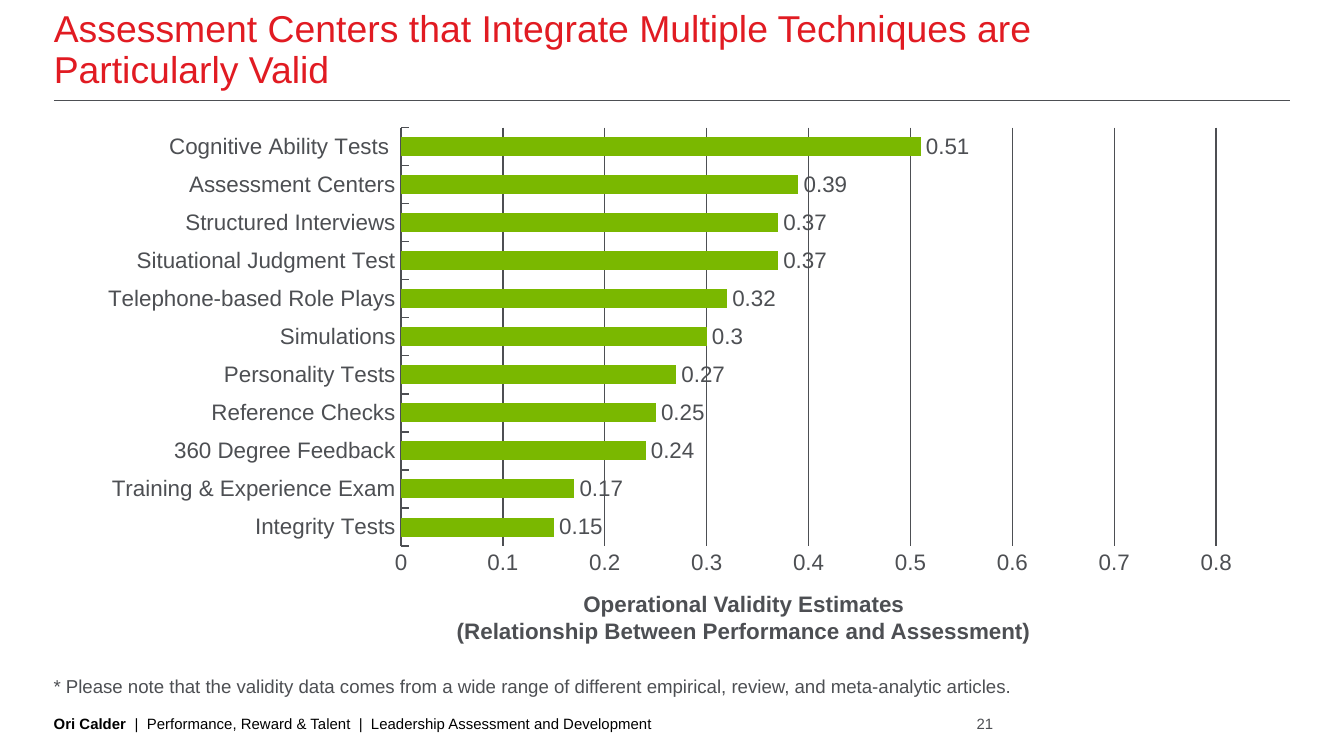
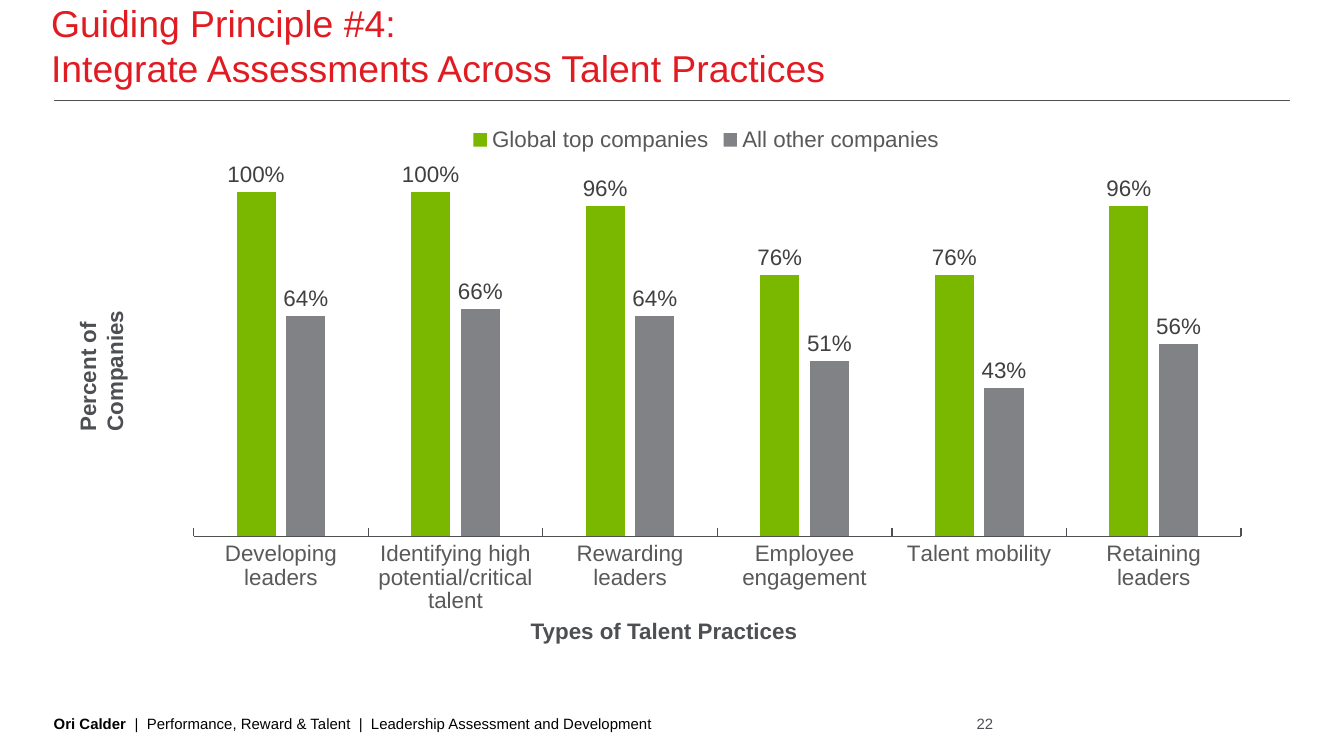
from dataclasses import dataclass

from lxml import etree
from pptx import Presentation
from pptx.chart.chart import Chart
from pptx.chart.data import CategoryChartData
from pptx.dml.color import RGBColor
from pptx.enum.chart import XL_CHART_TYPE as ChartType
from pptx.enum.chart import XL_LABEL_POSITION as LabelPosition
from pptx.enum.chart import XL_LEGEND_POSITION as LegendPosition
from pptx.enum.chart import XL_TICK_MARK as TickMark
from pptx.enum.shapes import MSO_CONNECTOR as Connector
from pptx.enum.text import MSO_ANCHOR as Anchor
from pptx.enum.text import MSO_AUTO_SIZE as AutoSize
from pptx.enum.text import PP_ALIGN as Align
from pptx.oxml import parse_xml
from pptx.oxml.ns import nsdecls, qn
from pptx.slide import Slide
from pptx.text.text import Font
from pptx.util import Emu, Pt

# Shared style: 200 px to the inch
PX = 4572
FONT = "Arial"
RED = RGBColor(0xE1, 0x1B, 0x22)
GREEN = RGBColor(0x7A, 0xB8, 0x00)
GRAY = RGBColor(0x80, 0x82, 0x85)
SLATE = RGBColor(0x4D, 0x4F, 0x53)
LEGEND_GRAY = RGBColor(0x59, 0x59, 0x59)
LABEL_GRAY = RGBColor(0x40, 0x40, 0x40)
BLACK = RGBColor(0, 0, 0)


@dataclass(frozen=True)
class Box:
    left: int
    top: int
    width: int
    height: int

    def emu(self) -> tuple[Emu, ...]:
        return tuple(Emu(px * PX) for px in (self.left, self.top, self.width, self.height))


@dataclass(frozen=True)
class Label:
    lines: tuple[str, ...]
    box: Box
    size: int = 12
    bold: bool = False
    align: Align = Align.LEFT
    color: RGBColor = SLATE
    vertical: bool = False
    flush: bool = False  # no insets, text sits on the bottom edge


@dataclass(frozen=True)
class Series:
    name: str
    values: tuple[float, ...]
    color: RGBColor


@dataclass(frozen=True)
class ChartStyle:
    kind: ChartType
    box: Box
    gap: int
    overlap: int
    axis_color: RGBColor
    label_color: RGBColor
    maximum: float
    number_format: str


FOOTER_NAME = "Ori Calder  "
FOOTER_TEXT = "|  Performance, Reward & Talent  |  Leadership Assessment and Development"

VALIDITY = {
    "Integrity Tests": 0.15,
    "Training & Experience Exam": 0.17,
    "360 Degree Feedback": 0.24,
    "Reference Checks": 0.25,
    "Personality Tests": 0.27,
    "Simulations": 0.3,
    "Telephone-based Role Plays": 0.32,
    "Situational Judgment Test": 0.37,
    "Structured Interviews": 0.37,
    "Assessment Centers": 0.39,
    "Cognitive Ability Tests ": 0.51,
}
PRACTICES = (
    "Developing leaders",
    "Identifying high potential/critical talent",
    "Rewarding leaders",
    "Employee engagement",
    "Talent mobility",
    "Retaining leaders",
)
COMPANIES = (
    Series("Global top companies", (1, 1, 0.96, 0.76, 0.76, 0.96), GREEN),
    Series("All other companies", (0.64, 0.66, 0.64, 0.51, 0.43, 0.56), GRAY),
)

VALIDITY_LABELS = (
    Label(
        ("Operational Validity Estimates", "(Relationship Between Performance and Assessment)"),
        Box(542, 868, 1130, 100), bold=True, align=Align.CENTER,
    ),
    Label(
        ("* Please note that the validity data comes from a wide range of different "
         "empirical, review, and meta-analytic articles.",),
        Box(60, 994, 1498, 54), size=10,
    ),
)
PRACTICE_LABELS = (
    Label(("Percent of Companies",), Box(100, 336, 122, 326), bold=True, vertical=True),
    Label(("Types of Talent Practices",), Box(770, 908, 456, 60), bold=True),
)

VALIDITY_STYLE = ChartStyle(
    ChartType.BAR_CLUSTERED, Box(126, 176, 1742, 694), 100, 0, SLATE, SLATE, 0.8, "General")
PRACTICE_STYLE = ChartStyle(
    ChartType.COLUMN_CLUSTERED, Box(222, 168, 1658, 788), 219, -27,
    LEGEND_GRAY, LABEL_GRAY, 1, "0%")


def set_font(font: Font, size: int, color: RGBColor, bold: bool = False) -> None:
    font.name = FONT
    font.size = Pt(size)
    font.bold = bold
    font.color.rgb = color


def clear_insets(frame) -> None:
    frame.margin_left = frame.margin_top = frame.margin_right = frame.margin_bottom = 0
    frame.vertical_anchor = Anchor.BOTTOM


def add_label(slide: Slide, label: Label):
    frame = slide.shapes.add_textbox(*label.box.emu()).text_frame
    frame.word_wrap = True
    if label.flush:
        clear_insets(frame)
    if label.vertical:
        frame._txBody.bodyPr.set("vert", "vert270")
    for index, line in enumerate(label.lines):
        paragraph = frame.add_paragraph() if index else frame.paragraphs[0]
        paragraph.text = line
        paragraph.alignment = label.align
        set_font(paragraph.font, label.size, label.color, label.bold)
    return frame


def add_footer(slide: Slide, number: int) -> None:
    add_label(slide, Label((str(number),), Box(1400, 1064, 78, 26), 8,
                           align=Align.RIGHT, flush=True))
    frame = add_label(slide, Label((FOOTER_NAME,), Box(80, 1064, 1320, 26), 8,
                                   color=BLACK, flush=True))
    paragraph = frame.paragraphs[0]
    paragraph.runs[0].font.bold = True
    paragraph.add_run().text = FOOTER_TEXT


def add_rule(slide: Slide) -> None:
    ends = (Emu(px * PX) for px in (80, 150, 1920, 150))
    rule = slide.shapes.add_connector(Connector.STRAIGHT, *ends)
    rule.line.color.rgb = SLATE
    rule.line.width = Pt(0.75)
    etree.SubElement(rule._element.spPr, qn("a:effectLst"))


def add_slide(presentation: Presentation, title: str, box: Box,
              spacing: float, number: int) -> Slide:
    slide = presentation.slides.add_slide(presentation.slide_layouts[5])
    shape = slide.shapes.title
    shape.left, shape.top, shape.width, shape.height = box.emu()
    frame = shape.text_frame
    frame.auto_size = AutoSize.NONE
    frame.word_wrap = True
    clear_insets(frame)
    paragraph = frame.paragraphs[0]
    paragraph.text = title
    paragraph.alignment = Align.LEFT
    paragraph.line_spacing = spacing
    set_font(paragraph.font, 20, RED)
    add_rule(slide)
    add_footer(slide, number)
    return slide


def add_chart(slide: Slide, style: ChartStyle, categories: tuple[str, ...],
              series_list: tuple[Series, ...]) -> Chart:
    data = CategoryChartData(number_format=style.number_format)
    data.categories = categories
    for item in series_list:
        data.add_series(item.name, item.values)
    chart = slide.shapes.add_chart(style.kind, *style.box.emu(), data).chart
    chart.has_title = False
    chart.has_legend = False
    set_font(chart.font, 10, BLACK)

    plot = chart.plots[0]
    plot.vary_by_categories = False
    plot.gap_width = style.gap
    plot.overlap = style.overlap
    for item, series in zip(series_list, plot.series):
        series.invert_if_negative = False
        series.format.fill.solid()
        series.format.fill.fore_color.rgb = item.color
        labels = series.data_labels
        labels.show_value = True
        labels.position = LabelPosition.OUTSIDE_END
        labels.number_format = style.number_format
        labels.number_format_is_linked = False
        set_font(labels.font, 12, style.label_color)

    category_axis, value_axis = chart.category_axis, chart.value_axis
    for axis, tick in ((category_axis, TickMark.INSIDE), (value_axis, TickMark.NONE)):
        axis.has_major_gridlines = False
        axis.major_tick_mark = tick
        axis.minor_tick_mark = TickMark.NONE
        set_font(axis.tick_labels.font, 12, style.axis_color)
    category_axis.format.line.color.rgb = SLATE
    category_axis.format.line.width = Pt(0.75)
    value_axis.format.line.fill.background()
    value_axis.minimum_scale = 0
    value_axis.maximum_scale = style.maximum
    value_axis.major_unit = 0.1
    return chart


def set_plot_area(chart: Chart, x: float, y: float, w: float, h: float) -> None:
    modes = '<c:layoutTarget val="inner"/><c:xMode val="edge"/><c:yMode val="edge"/>'
    sizes = "".join(f'<c:{key} val="{value}"/>' for key, value in zip("xywh", (x, y, w, h)))
    layout = parse_xml(f'<c:layout {nsdecls("c")}><c:manualLayout>{modes}{sizes}'
                       "</c:manualLayout></c:layout>")
    plot_area = chart._chartSpace.chart.plotArea
    for existing in plot_area.findall(qn("c:layout")):
        plot_area.remove(existing)
    plot_area.insert(0, layout)


def build_validity_slide(presentation: Presentation) -> None:
    slide = add_slide(
        presentation,
        "Assessment Centers that Integrate Multiple Techniques are\vParticularly Valid",
        Box(80, 50, 1840, 86), 0.9, 21)
    for label in VALIDITY_LABELS:
        add_label(slide, label)
    series = Series("Series 1", tuple(VALIDITY.values()), GREEN)
    chart = add_chart(slide, VALIDITY_STYLE, tuple(VALIDITY), (series,))
    chart.value_axis.has_major_gridlines = True
    gridline = chart.value_axis.major_gridlines.format.line
    gridline.color.rgb = SLATE
    gridline.width = Pt(0.75)


def build_practices_slide(presentation: Presentation) -> None:
    slide = add_slide(
        presentation,
        "Guiding Principle #4:\vIntegrate Assessments Across Talent Practices",
        Box(76, 48, 1800, 86), 1.0, 22)
    chart = add_chart(slide, PRACTICE_STYLE, PRACTICES, COMPANIES)
    chart.value_axis.visible = False
    chart.has_legend = True
    chart.legend.position = LegendPosition.TOP
    chart.legend.include_in_layout = False
    set_font(chart.legend.font, 12, LEGEND_GRAY)
    set_plot_area(chart, 0.04, 0.15, 0.94, 0.65)
    for label in PRACTICE_LABELS:
        add_label(slide, label)


def main() -> None:
    presentation = Presentation()
    presentation.slide_width = Emu(2000 * PX)
    presentation.slide_height = Emu(1125 * PX)
    build_validity_slide(presentation)
    build_practices_slide(presentation)
    presentation.save("out.pptx")


if __name__ == "__main__":
    main()
